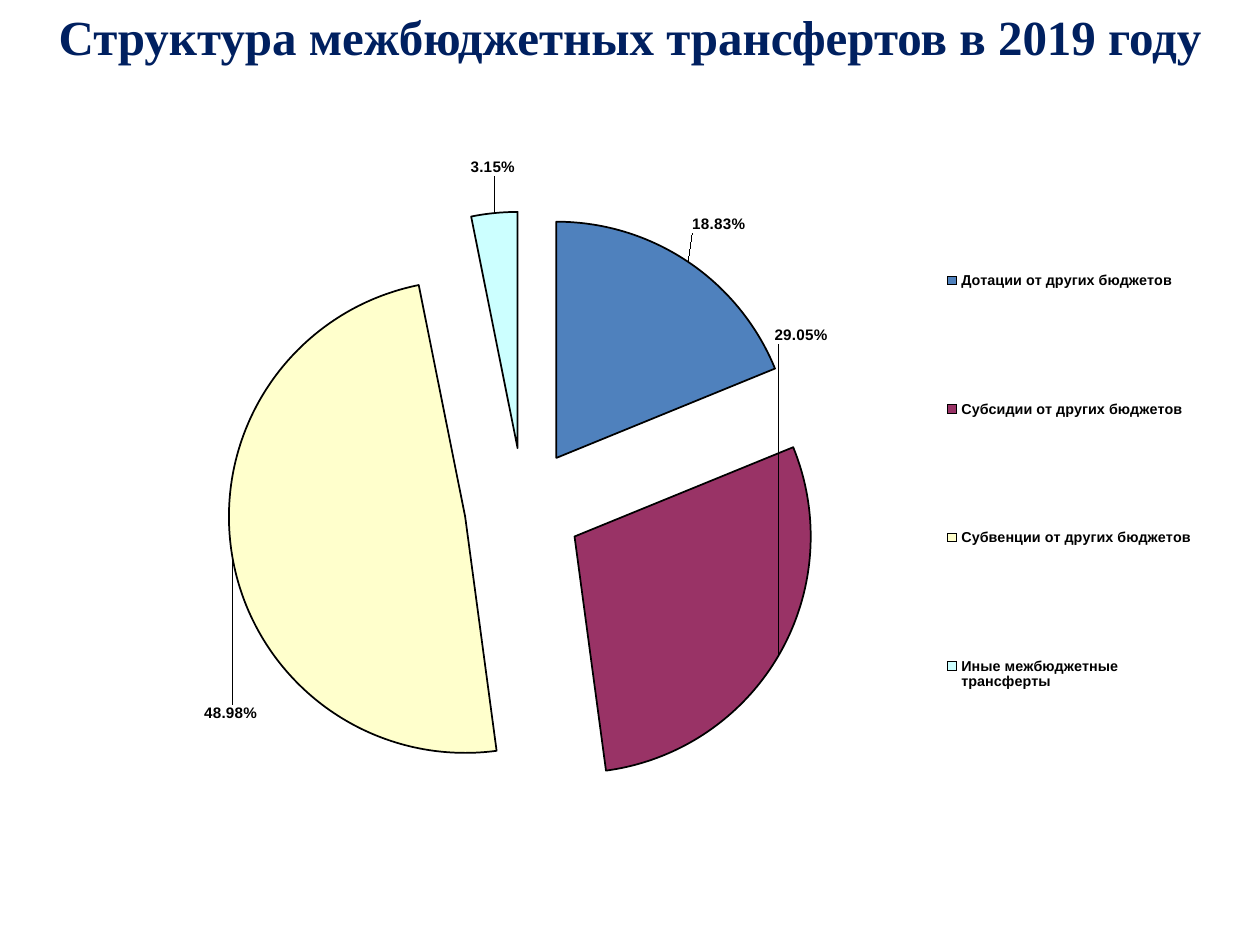
from pptx import Presentation
from pptx.chart.data import CategoryChartData
from pptx.dml.color import RGBColor
from pptx.enum.chart import XL_CHART_TYPE, XL_LABEL_POSITION, XL_LEGEND_POSITION
from pptx.enum.text import MSO_ANCHOR, PP_ALIGN
from pptx.oxml import parse_xml
from pptx.oxml.ns import nsdecls, qn
from pptx.util import Inches, Pt

NAVY = RGBColor(0x00, 0x20, 0x60)
BLACK = RGBColor(0x00, 0x00, 0x00)
BLUE = RGBColor(0x4F, 0x81, 0xBD)
PLUM = RGBColor(0x99, 0x33, 0x66)
CREAM = RGBColor(0xFF, 0xFF, 0xCC)
AQUA = RGBColor(0xCC, 0xFF, 0xFF)


def style(font, size, color=BLACK, name="Arial"):
    for key, value in {"size": Pt(size), "bold": True, "name": name}.items():
        setattr(font, key, value)
    font.color.rgb = color


def place(item, spot, values):
    for old in item.findall(qn("c:layout")):
        item.remove(old)
    parts = "".join(f'<c:{key} val="{value}"/>' for key, value in values.items())
    item.insert(spot, parse_xml(
        f'<c:layout {nsdecls("c")}><c:manualLayout>{parts}</c:manualLayout></c:layout>'))


deck = Presentation()
deck.slide_width, deck.slide_height = Inches(10), Inches(7.5)
slide = deck.slides.add_slide(deck.slide_layouts[6])

title = slide.shapes.add_textbox(Inches(0), Inches(0), Inches(10), Inches(0.57))
frame = title.text_frame
for key, value in {"word_wrap": True, "vertical_anchor": MSO_ANCHOR.MIDDLE}.items():
    setattr(frame, key, value)
line = frame.paragraphs[0]
line.alignment = PP_ALIGN.CENTER
run = line.add_run()
run.text = "Структура межбюджетных трансфертов в 2019 году"
style(run.font, 28, NAVY, "Times New Roman")

rows = [
    ("Дотации от других бюджетов", 0.1883, BLUE, 0, -0.03),
    ("Субсидии от других бюджетов", 0.2905, PLUM, -0.01, -0.45),
    ("Субвенции от других бюджетов", 0.4898, CREAM, 0.03, 0.2),
    ("Иные межбюджетные трансферты", 0.0315, AQUA, 0.02, -0.04),
]
data = CategoryChartData(number_format="0.00%")
data.categories = [row[0] for row in rows]
data.add_series("Series 1", [row[1] for row in rows])
chart = slide.shapes.add_chart(
    XL_CHART_TYPE.PIE, Inches(0.86), Inches(0.86), Inches(8.67), Inches(5.86), data).chart
style(chart.font, 14.5)
for key, value in {"has_title": False, "has_legend": True}.items():
    setattr(chart, key, value)

legend = chart.legend
for key, value in {"position": XL_LEGEND_POSITION.RIGHT, "include_in_layout": False}.items():
    setattr(legend, key, value)
style(legend.font, 8.2)
edge = {"xMode": "edge", "yMode": "edge"}
place(legend._element, 1, edge | {"x": 0.76, "y": 0.07, "w": 0.24, "h": 0.87})
area = chart._chartSpace.chart.plotArea
place(area, 0, {"layoutTarget": "inner"} | edge | {"x": 0, "y": 0.14, "w": 0.76, "h": 0.8})

pie = chart.plots[0]
pie.vary_by_categories = True
series = pie.series[0]
labels = series.data_labels
for key, value in {"show_value": True, "number_format": "0.00%",
                   "number_format_is_linked": False,
                   "position": XL_LABEL_POSITION.OUTSIDE_END}.items():
    setattr(labels, key, value)
style(labels.font, 8.7)

for index, (name, share, color, right, down) in enumerate(rows):
    point = series.points[index]
    point.format.fill.solid()
    point.format.fill.fore_color.rgb = color
    point.format.line.color.rgb = BLACK
    point.format.line.width = Pt(1)
    label = point.data_label
    style(label.font, 8.7)
    label.position = XL_LABEL_POSITION.OUTSIDE_END

parts = series._element.findall(qn("c:dPt"))
for spot in [parts[0]] + [part.find(qn("c:spPr")) for part in parts]:
    spot.addprevious(parse_xml(f'<c:explosion {nsdecls("c")} val="25"/>'))
for item, row in zip(series._element.iter(qn("c:dLbl")), rows):
    place(item, 1, {"x": row[3], "y": row[4]})

deck.save("out.pptx")
